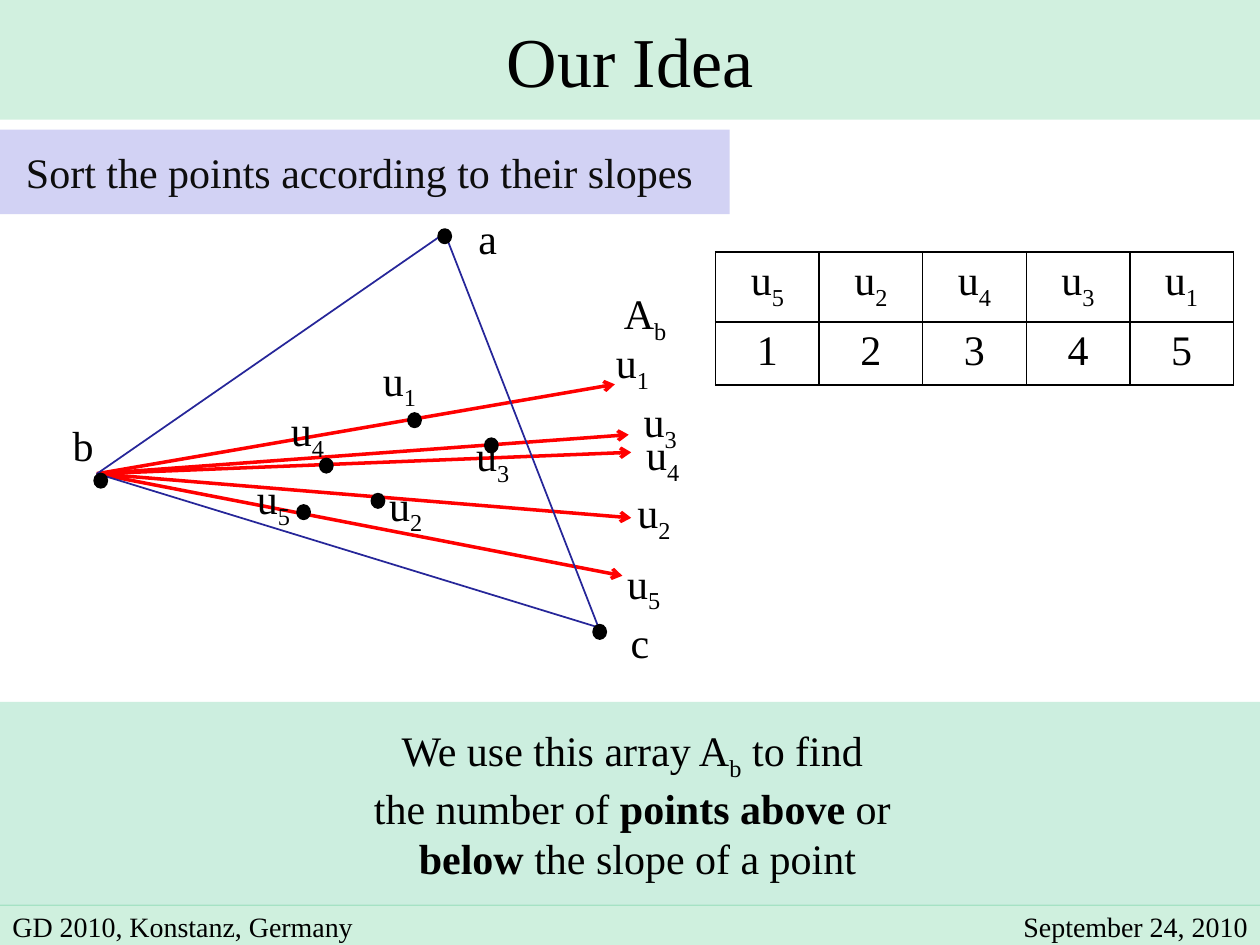
from dataclasses import dataclass

from lxml.etree import SubElement
from pptx import Presentation
from pptx.dml.color import RGBColor
from pptx.enum.shapes import MSO_CONNECTOR, MSO_SHAPE
from pptx.enum.text import MSO_ANCHOR, MSO_AUTO_SIZE, PP_ALIGN
from pptx.oxml.ns import qn
from pptx.util import Inches, Pt


@dataclass(frozen=True)
class Theme:
    """Colours, font and type sizes of the slide."""
    font: str = "Times New Roman"
    ink: str = "000000"
    soft_ink: str = "0D0D0D"
    green: str = "00B050"
    mint: str = "CCEEDF"
    lavender: str = "D2D2F4"
    ray: str = "FF0000"
    triangle: str = "262699"
    title_size: int = 40
    text_size: int = 24
    footer_size: int = 16


THEME = Theme()
COLUMNS, ROWS = 100, 75
CORNERS = {"a": (35.3, 18.5), "b": (7.7, 37.6), "c": (47.5, 49.8)}
CORNER_DOTS = [(35.3, 18.75), (8, 38.15), (47.6, 50.15)]
CORNER_LABELS = {"a": (38.7, 18.9), "b": (6.6, 35.3), "c": (50.8, 50.9)}
# Each entry: dot, dot label, ray tip, tip label.
POINTS = {
    "1": ((32.9, 33.35), (31.7, 30.4), (48.8, 30.5), (50.2, 29)),
    "2": ((30, 39.75), (32.2, 40.3), (50.1, 41.1), (51.9, 40.9)),
    "3": ((39, 35.35), (39.1, 36.4), (49.9, 34.5), (52.4, 33.7)),
    "4": ((25.9, 36.95), (24.4, 34.4), (50.1, 35.9), (52.6, 36.3)),
    "5": ((24.1, 40.65), (21.7, 39.8), (49.4, 45.7), (51.1, 46.5)),
}
SLOPE_ORDER = "52431"
CONCLUSION = [
    [("We use this array A", ""), ("b", "sub"), (" to find ", "")],
    [("the number of ", ""), ("points above", "bold"), (" or ", "")],
    [("below", "bold"), (" the slope of a point", "")],
]


def grid(*cells):
    """Turn grid columns and rows into lengths."""
    return [Inches(cell * 10 / COLUMNS) for cell in cells]


def color(code):
    """Give the colour for a hex code."""
    return RGBColor.from_string(code)


def indexed(letter, index):
    """Give the runs of a letter with a subscript."""
    return [(letter, ""), (index, "sub")]


def write(paragraph, runs, size=THEME.text_size, ink=THEME.ink, align=PP_ALIGN.CENTER):
    """Add styled runs to a paragraph."""
    paragraph.alignment = align
    for text, style in runs:
        run = paragraph.add_run()
        run.text = text
        run.font.name = THEME.font
        run.font.size = Pt(size)
        run.font.color.rgb = color(ink)
        run.font.bold = style == "bold"
        if style == "sub":
            run.font._element.set("baseline", "-25000")


def paint(shape, code, opacity=100):
    """Fill a shape with a colour at an opacity in percent."""
    shape.fill.solid()
    shape.fill.fore_color.rgb = color(code)
    if opacity < 100:
        node = shape._element.spPr.find(".//" + qn("a:srgbClr"))
        SubElement(node, qn("a:alpha"), val=str(opacity * 1000))


def place(placeholder, left, top, width, height):
    """Move a placeholder and prepare its text frame."""
    placeholder.left, placeholder.top, placeholder.width, placeholder.height = grid(
        left, top, width, height)
    frame = placeholder.text_frame
    frame.auto_size = MSO_AUTO_SIZE.NONE
    frame.vertical_anchor = MSO_ANCHOR.MIDDLE
    return frame


def add_band(shapes, kind, box, code, opacity=100):
    """Add a coloured band without outline."""
    band = shapes.add_shape(kind, *grid(*box))
    band.shadow.inherit = False
    band.line.fill.background()
    paint(band, code, opacity)
    return band


def add_text(shapes, box, runs, **style):
    """Add a one-line text box centred vertically."""
    frame = shapes.add_textbox(*grid(*box)).text_frame
    frame.word_wrap = True
    frame.vertical_anchor = MSO_ANCHOR.MIDDLE
    write(frame.paragraphs[0], runs, **style)


def add_label(shapes, center, runs):
    """Add a diagram label around its centre."""
    x, y = center
    add_text(shapes, (x - 3, y - 2.5, 6, 5), runs)


def add_dot(shapes, center):
    """Add a black point."""
    x, y = center
    dot = add_band(shapes, MSO_SHAPE.OVAL, (x - 0.5, y - 0.55, 1, 1.1), THEME.ink)
    dot.line.color.rgb = color(THEME.ink)
    dot.line.width = Pt(1.25)


def add_ray(shapes, start, tip):
    """Add a red arrow."""
    ray = shapes.add_connector(MSO_CONNECTOR.STRAIGHT, *grid(*start, *tip))
    ray.line.color.rgb = color(THEME.ray)
    ray.line.width = Pt(2)
    SubElement(ray.line._get_or_add_ln(), qn("a:tailEnd"), type="arrow")
    SubElement(ray._element.spPr, qn("a:effectLst"))


def add_triangle(shapes, corners):
    """Add the outline through three corners."""
    first, *others = [tuple(grid(*corner)) for corner in corners]
    builder = shapes.build_freeform(*first)
    builder.add_line_segments(others, close=True)
    triangle = builder.convert_to_shape()
    triangle.shadow.inherit = False
    triangle.fill.background()
    triangle.line.color.rgb = color(THEME.triangle)
    triangle.line.width = Pt(1)


def add_diagram(shapes):
    """Add the triangle, its points and the rays from b."""
    for dot, label, tip, tip_label in POINTS.values():
        add_ray(shapes, CORNERS["b"], tip)
    add_triangle(shapes, CORNERS.values())
    for dot in CORNER_DOTS:
        add_dot(shapes, dot)
    for name, center in CORNER_LABELS.items():
        add_label(shapes, center, [(name, "")])
    for index, (dot, label, tip, tip_label) in POINTS.items():
        add_dot(shapes, dot)
        for center in (label, tip_label):
            add_label(shapes, center, indexed("u", index))
    add_label(shapes, (51.2, 25.1), indexed("A", "b"))


def border(cell):
    """Draw thin black borders around a table cell."""
    properties = cell._tc.get_or_add_tcPr()
    for position, side in enumerate(("lnL", "lnR", "lnT", "lnB")):
        line = properties.makeelement(qn("a:" + side), {"w": str(Pt(1))})
        fill = SubElement(line, qn("a:solidFill"))
        SubElement(fill, qn("a:srgbClr"), val=THEME.ink)
        properties.insert(position, line)


def add_array(shapes):
    """Add the table of points sorted by slope."""
    table = shapes.add_table(2, len(SLOPE_ORDER), *grid(56.8, 20, 41.1, 10)).table
    table.first_row = table.horz_banding = False
    table.rows[0].height, table.rows[1].height = grid(5.2, 4.8)
    for column, index in enumerate(SLOPE_ORDER):
        contents = (indexed("u", index), [(str(column + 1), "")])
        for row, runs in enumerate(contents):
            cell = table.cell(row, column)
            cell.fill.background()
            border(cell)
            write(cell.text_frame.paragraphs[0], runs)


def add_conclusion(placeholder):
    """Fill the body placeholder with centred lines."""
    frame = place(placeholder, 0, 55.7, COLUMNS, 16.2)
    paint(placeholder, THEME.mint)
    for position, runs in enumerate(CONCLUSION):
        paragraph = frame.add_paragraph() if position else frame.paragraphs[0]
        paragraph.space_before = Pt(0)
        properties = paragraph._p.get_or_add_pPr()
        properties.set("marL", str(Inches(0.12)))
        properties.set("indent", "0")
        SubElement(properties, qn("a:buNone"))
        write(paragraph, runs)


def add_footer(shapes):
    """Add the grouped footer with place and date."""
    group = shapes.add_group_shape().shapes
    add_band(group, MSO_SHAPE.RECTANGLE, (0, 71.8, COLUMNS, 3.2), THEME.green, 19)
    size = THEME.footer_size
    add_text(group, (0, 71, 31.1, 5.1), [("GD 2010, Konstanz, Germany", "")],
             size=size, align=PP_ALIGN.LEFT)
    add_text(group, (77.7, 71, 22.3, 5.1), [("September 24, 2010", "")],
             size=size, align=PP_ALIGN.RIGHT)


def main():
    """Build and save the slide."""
    presentation = Presentation()
    presentation.slide_width, presentation.slide_height = grid(COLUMNS, ROWS)
    slide = presentation.slides.add_slide(presentation.slide_layouts[1])
    shapes = slide.shapes
    title = place(shapes.title, 0, 0, COLUMNS, 9.5)
    paint(shapes.title, THEME.green, 18)
    write(title.paragraphs[0], [("Our Idea", "")], size=THEME.title_size)
    add_conclusion(slide.placeholders[1])
    add_diagram(shapes)
    add_array(shapes)
    band = add_band(shapes, MSO_SHAPE.ROUNDED_RECTANGLE, (0, 10.3, 57.9, 6.7), THEME.lavender)
    band.adjustments[0] = 0
    write(band.text_frame.paragraphs[0],
          [("Sort the points according to their slopes ", "")], ink=THEME.soft_ink)
    add_footer(shapes)
    presentation.save("out.pptx")


if __name__ == "__main__":
    main()
